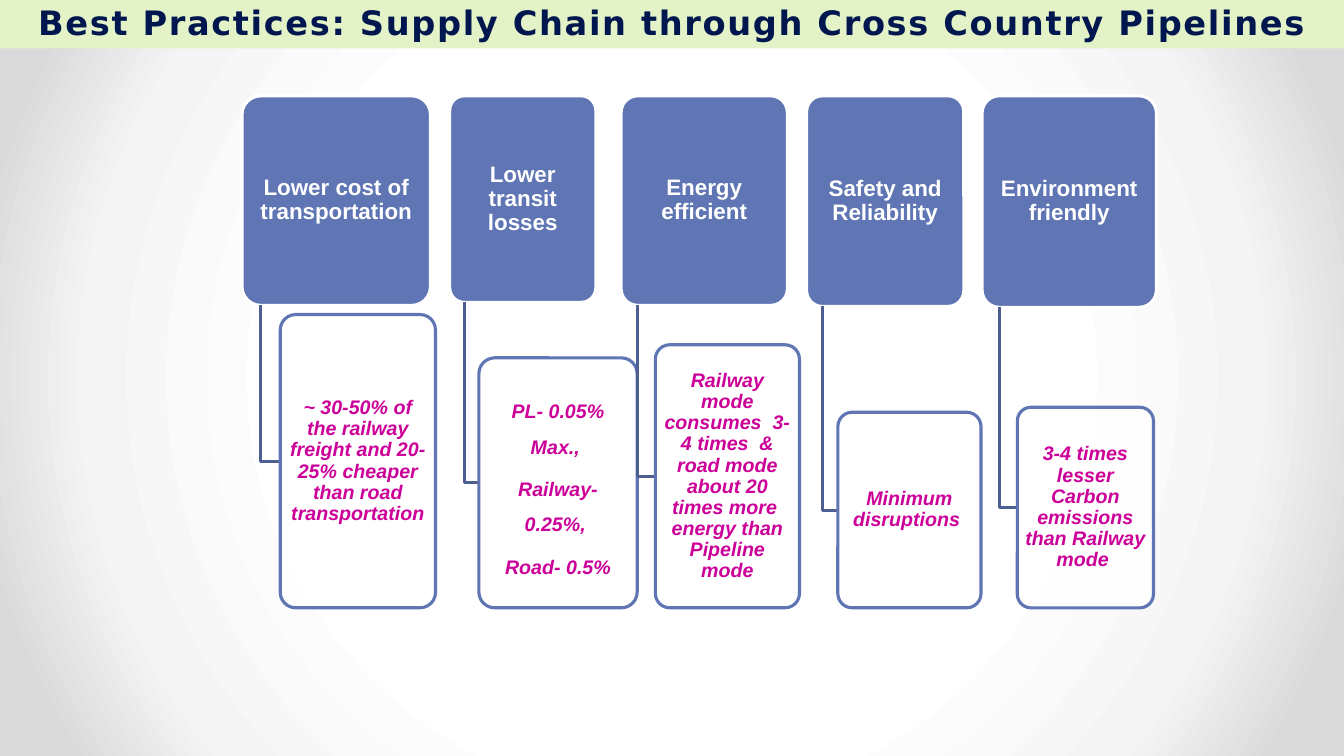
from lxml import etree
from pptx import Presentation
from pptx import util as u
from pptx.dml.color import RGBColor
from pptx.enum import shapes, text
from pptx.oxml import parse_xml
from pptx.oxml.ns import qn

# Content: heading, (left, width, height), details, (left, width, height), line spacing
TITLE = "Best Practices: Supply Chain through Cross Country Pipelines"
BENEFITS = [
    ("Lower cost of transportation", (2.4, 1.87, 2.08),
     ["~ 30-50% of the railway freight and 20-25% cheaper than road transportation"],
     (2.78, 1.54, 2.91), 0.9),
    ("Lower transit losses", (4.46, 1.45, 2.05),
     ["PL- 0.05% Max., ", "Railway- 0.25%, ", "Road- 0.5%"],
     (4.75, 1.57, 2.48), 1.5),
    ("Energy efficient", (6.16, 1.65, 2.08),
     ["Railway mode consumes  3-4 times  & road mode about 20 times more  "
      "energy than Pipeline mode"],
     (6.5, 1.43, 2.61), 0.9),
    ("Safety and Reliability", (8, 1.56, 2.09),
     ["Minimum disruptions "],
     (8.31, 1.42, 1.94), 0.9),
    ("Environment friendly", (9.74, 1.73, 2.1),
     ["3-4 times lesser Carbon emissions than Railway mode "],
     (10.09, 1.35, 1.99), 0.9),
]
HEADING_TOP = 0.95
DETAIL_BOTTOM = 6.03
STEM_SHARE = 0.1  # the stem leaves a heading at a tenth of its width

WHITE = RGBColor(0xFF, 0xFF, 0xFF)
BLUE = RGBColor(0x60, 0x76, 0xB4)
STEM_BLUE = RGBColor(0x4D, 0x5E, 0x90)
MAGENTA = RGBColor(0xCC, 0x00, 0x99)
NAVY = RGBColor(0x00, 0x16, 0x4E)
PALE_GREEN = RGBColor(0xE3, 0xF2, 0xC7)
BACKDROP = [(50, "FFFFFF"), (76, "F4F4F4"), (92, "DADADA")]


def write(paragraph, wording, size, font_name, color, italic=False):
    paragraph.alignment = text.PP_ALIGN.CENTER
    run = paragraph.add_run()
    run.text = wording
    font = run.font
    font.name, font.size, font.bold, font.italic = font_name, u.Pt(size), True, italic
    font.color.rgb = color
    return run


def add_card(slide, left, top, width, height, fill, line, paragraphs, spacing,
             size, color, italic=False):
    card = slide.shapes.add_shape(shapes.MSO_SHAPE.ROUNDED_RECTANGLE,
                                  *map(u.Inches, (left, top, width, height)))
    card.adjustments[0] = 0.1
    card.shadow.inherit = False
    card.fill.solid()
    card.fill.fore_color.rgb = fill
    card.line.color.rgb = line
    card.line.width = u.Pt(2.25)

    frame = card.text_frame
    frame.word_wrap = True
    frame.vertical_anchor = text.MSO_ANCHOR.MIDDLE
    frame.margin_left = frame.margin_right = u.Inches(0.03)
    frame.margin_top = frame.margin_bottom = u.Inches(0.02)
    for index, wording in enumerate(paragraphs):
        paragraph = frame.add_paragraph() if index else frame.paragraphs[0]
        paragraph.line_spacing = spacing
        paragraph.space_after = u.Pt(5)
        write(paragraph, wording, size, "Arial", color, italic)
    return card


def add_stem(slide, x, top, bottom, end_x):
    builder = slide.shapes.build_freeform(u.Inches(x), u.Inches(top))
    builder.add_line_segments([(u.Inches(x), u.Inches(bottom)),
                               (u.Inches(end_x), u.Inches(bottom))], close=False)
    stem = builder.convert_to_shape()
    stem.shadow.inherit = False
    stem.fill.background()
    stem.line.color.rgb = STEM_BLUE
    stem.line.width = u.Pt(2.25)


def set_backdrop(slide):
    fill = slide.background.fill
    fill.solid()
    fill.fore_color.rgb = WHITE
    stops = "".join(f'<a:gs pos="{position * 1000}"><a:srgbClr val="{color}"/></a:gs>'
                    for position, color in BACKDROP)
    gradient = parse_xml(
        '<a:gradFill xmlns:a="http://schemas.openxmlformats.org/drawingml/2006/main" '
        f'rotWithShape="1"><a:gsLst>{stops}</a:gsLst><a:path path="circle">'
        '<a:fillToRect l="50000" t="50000" r="50000" b="50000"/></a:path></a:gradFill>')
    solid = next(slide.element.iter(qn("p:bgPr"))).find(qn("a:solidFill"))
    solid.getparent().replace(solid, gradient)


def add_title(slide):
    title = slide.shapes.title
    title.left, title.top = u.Inches(0), u.Inches(0)
    title.width, title.height = u.Inches(13.33), u.Inches(0.48)
    title.fill.solid()
    title.fill.fore_color.rgb = PALE_GREEN
    frame = title.text_frame
    frame.word_wrap = True
    frame.auto_size = text.MSO_AUTO_SIZE.NONE
    frame.vertical_anchor = text.MSO_ANCHOR.TOP
    paragraph = frame.paragraphs[0]
    paragraph.line_spacing = u.Pt(26.6)
    run = write(paragraph, TITLE, 24, "DejaVu Sans", NAVY)
    run.font._element.set("spc", "120")


def main():
    presentation = Presentation()
    presentation.slide_width = u.Inches(13.33)
    presentation.slide_height = u.Inches(7.5)
    slide = presentation.slides.add_slide(presentation.slide_layouts[5])
    set_backdrop(slide)
    add_title(slide)

    # Each benefit: heading card, stem, detail card
    for heading, heading_box, details, detail_box, spacing in BENEFITS:
        left, width, height = heading_box
        detail_left, detail_width, detail_height = detail_box
        detail_top = DETAIL_BOTTOM - detail_height
        add_card(slide, left, HEADING_TOP, width, height, BLUE, WHITE,
                 [heading], 0.9, 16, WHITE)
        add_stem(slide, left + STEM_SHARE * width, HEADING_TOP + height,
                 detail_top + detail_height / 2, detail_left)
        card = add_card(slide, detail_left, detail_top, detail_width, detail_height,
                        WHITE, BLUE, details, spacing, 14, MAGENTA, italic=True)
        # Detail cards are slightly see-through
        fill_color = card.element.spPr.find(qn("a:solidFill"))[0]
        etree.SubElement(fill_color, qn("a:alpha")).set("val", "90000")

    presentation.save("out.pptx")


if __name__ == "__main__":
    main()
